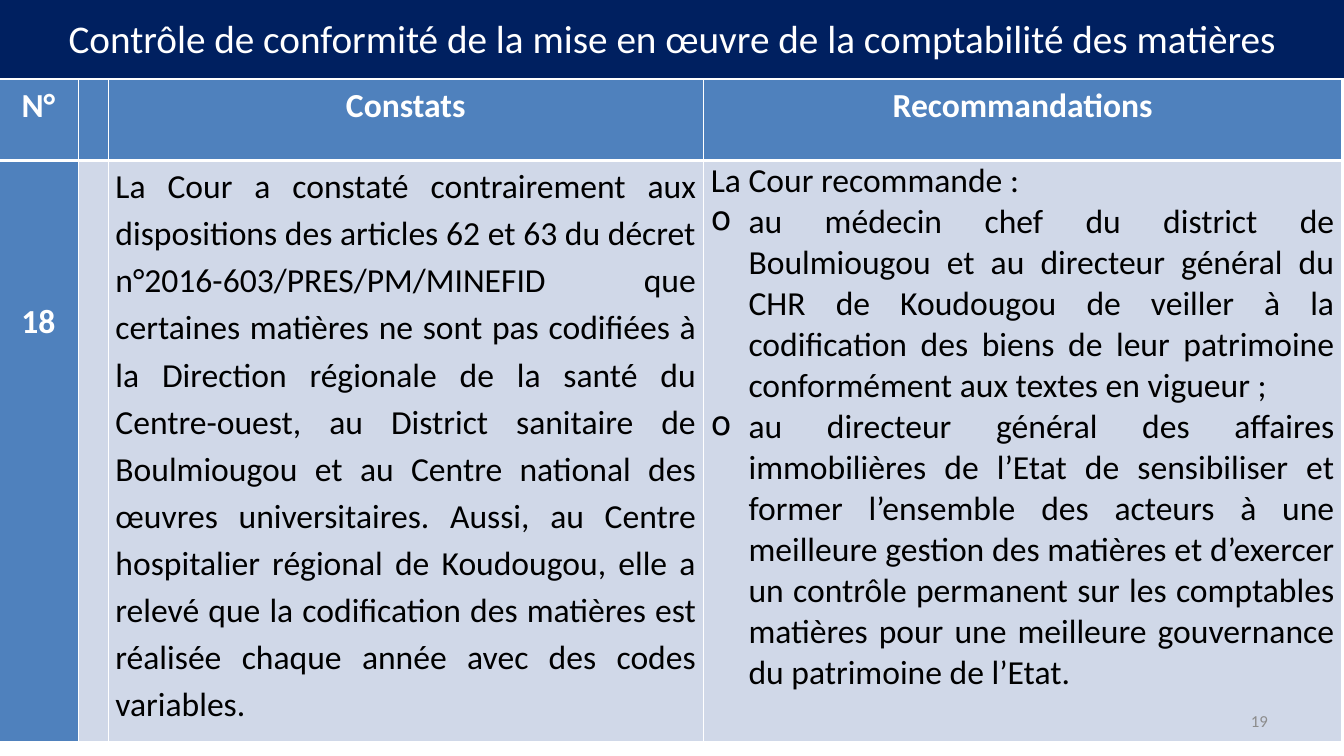
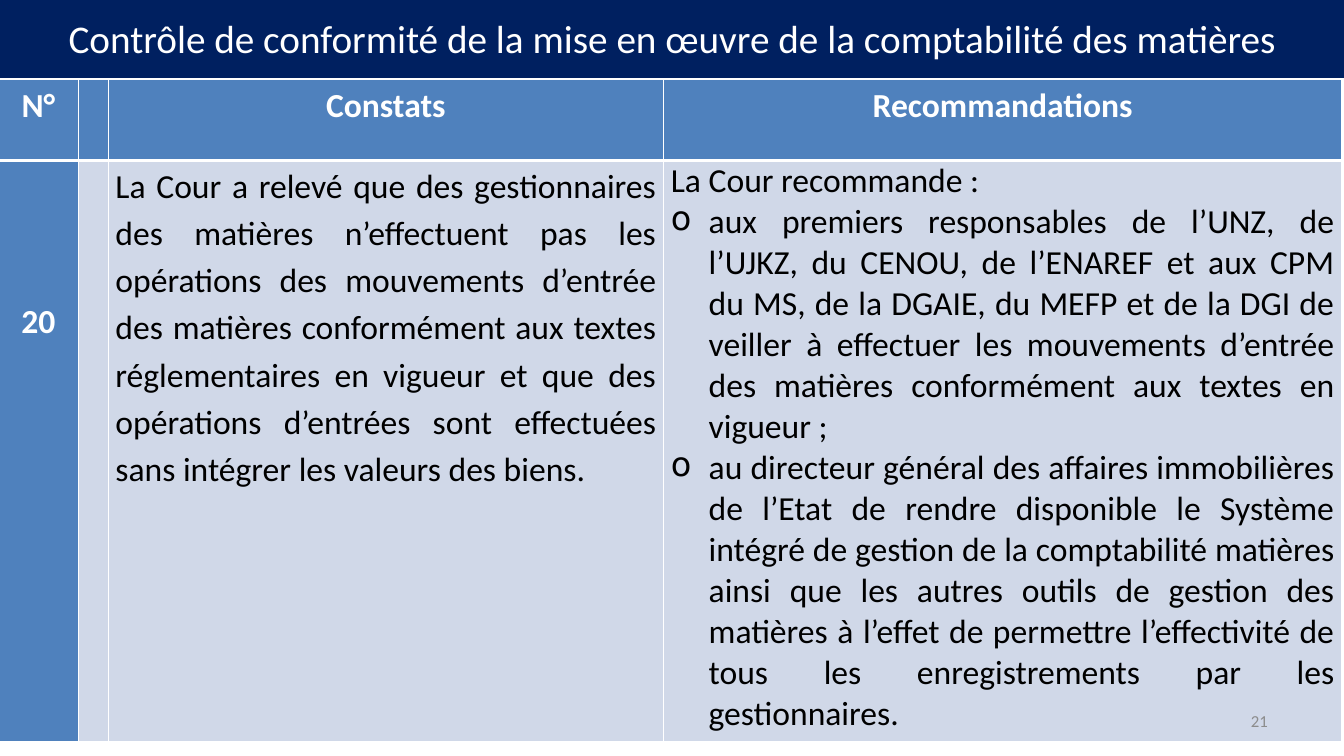
from lxml.etree import SubElement
from pptx import Presentation
from pptx.dml.color import RGBColor
from pptx.enum.dml import MSO_LINE
from pptx.enum.text import MSO_ANCHOR, MSO_AUTO_SIZE, PP_ALIGN
from pptx.oxml.ns import qn
from pptx.util import Pt

SCALE = 9525
WIDTH, HEIGHT = 1280, 720
FONT = "Calibri"
NAVY = RGBColor(0x00, 0x20, 0x60)
BLUE = RGBColor(0x4F, 0x81, 0xBD)
PALE = RGBColor(0xD0, 0xD8, 0xE8)
WHITE = RGBColor(0xFF, 0xFF, 0xFF)
BLACK = RGBColor(0x00, 0x00, 0x00)
GREY = RGBColor(0x8C, 0x8C, 0x8C)

TITLE = "Contrôle de conformité de la mise en œuvre de la comptabilité des matières"
HEADERS = ("N°", "", "Constats", "Recommandations")
INTRODUCTION = "La Cour recommande :"
NUMBER_WIDTH, SPACER_WIDTH = 77, 28
ROW_HEIGHTS = (77, 553)
NUMBER_DROP = 128
BULLET_INDENT = 36

FINDINGS = (
    {
        "number": "18",
        "page": "19",
        "finding_width": 567,
        "finding": "La Cour a constaté contrairement aux dispositions des articles 62 et 63 du décret "
        "n°2016-603/PRES/PM/MINEFID que certaines matières ne sont pas codifiées à la Direction "
        "régionale de la santé du Centre-ouest, au District sanitaire de Boulmiougou et au Centre "
        "national des œuvres universitaires. Aussi, au Centre hospitalier régional de Koudougou, "
        "elle a relevé que la codification des matières est réalisée chaque année avec des codes "
        "variables.",
        "recommendations": (
            "au médecin chef du district de Boulmiougou et au directeur général du CHR de Koudougou "
            "de veiller à la codification des biens de leur patrimoine conformément aux textes en "
            "vigueur ;",
            "au directeur général des affaires immobilières de l’Etat de sensibiliser et former "
            "l’ensemble des acteurs à une meilleure gestion des matières et d’exercer un contrôle "
            "permanent sur les comptables matières pour une meilleure gouvernance du patrimoine de "
            "l’Etat.",
        ),
    },
    {
        "number": "20",
        "page": "21",
        "finding_width": 529,
        "finding": "La Cour a relevé que des gestionnaires des matières n’effectuent pas les "
        "opérations des mouvements d’entrée des matières conformément aux textes réglementaires en "
        "vigueur et que des opérations d’entrées sont effectuées sans intégrer les valeurs des "
        "biens.",
        "recommendations": (
            "aux premiers responsables de l’UNZ, de l’UJKZ, du CENOU, de l’ENAREF et aux CPM du MS, "
            "de la DGAIE, du MEFP et de la DGI de veiller à effectuer les mouvements d’entrée des "
            "matières conformément aux textes en vigueur ;",
            "au directeur général des affaires immobilières de l’Etat de rendre disponible le "
            "Système intégré de gestion de la comptabilité matières ainsi que les autres outils de "
            "gestion des matières à l’effet de permettre l’effectivité de tous les enregistrements "
            "par les gestionnaires.",
        ),
    },
)


class Deck:
    """Hold the shared style and draw on the current slide."""

    def __init__(self):
        self.presentation = Presentation()
        self.presentation.slide_width = WIDTH * SCALE
        self.presentation.slide_height = HEIGHT * SCALE
        self.slide = None

    def add_slide(self):
        self.slide = self.presentation.slides.add_slide(self.presentation.slide_layouts[5])

    def add_text(self, paragraph, text, size=24, color=BLACK, bold=False,
                 align=PP_ALIGN.JUSTIFY, spacing=None):
        paragraph.alignment = align
        if spacing:
            paragraph.line_spacing = spacing
        run = paragraph.add_run()
        run.text = text
        run.font.name = FONT
        run.font.size = Pt(size)
        run.font.bold = bold
        run.font.color.rgb = color

    def bullet(self, paragraph):
        properties = paragraph._p.get_or_add_pPr()
        properties.set("marL", str(BULLET_INDENT * SCALE))
        properties.set("indent", str(-BULLET_INDENT * SCALE))
        SubElement(properties, qn("a:buChar")).set("char", "o")

    def title(self, text):
        shape = self.slide.shapes.title
        shape.left, shape.top = 0, 0
        shape.width, shape.height = WIDTH * SCALE, 73 * SCALE
        shape.fill.solid()
        shape.fill.fore_color.rgb = NAVY
        shape.line.color.rgb = NAVY
        shape.line.width = Pt(2)
        shape.line.dash_style = MSO_LINE.SOLID
        frame = shape.text_frame
        frame.auto_size = MSO_AUTO_SIZE.NONE
        frame.vertical_anchor = MSO_ANCHOR.MIDDLE
        self.add_text(frame.paragraphs[0], text, 28, WHITE, align=PP_ALIGN.CENTER)

    def style_cell(self, cell, fill, is_header):
        cell.margin_left = cell.margin_right = 7 * SCALE
        cell.margin_top = cell.margin_bottom = 0
        properties = cell._tc.get_or_add_tcPr()
        thick_side = "B" if is_header else "T"
        for side in "LRTB":
            line = SubElement(properties, qn(f"a:ln{side}"))
            line.set("w", str(Pt(3 if side == thick_side else 1)))
            color = SubElement(SubElement(line, qn("a:solidFill")), qn("a:srgbClr"))
            color.set("val", str(WHITE))
        cell.fill.solid()
        cell.fill.fore_color.rgb = fill

    def table(self, finding):
        finding_width = finding["finding_width"]
        rest = WIDTH - NUMBER_WIDTH - SPACER_WIDTH - finding_width
        widths = (NUMBER_WIDTH, SPACER_WIDTH, finding_width, rest)
        table = self.slide.shapes.add_table(
            len(ROW_HEIGHTS), len(widths), -2 * SCALE, 76 * SCALE,
            WIDTH * SCALE, sum(ROW_HEIGHTS) * SCALE).table
        table.horz_banding = False
        for row, height in zip(table.rows, ROW_HEIGHTS):
            row.height = height * SCALE
        for index, (width, header) in enumerate(zip(widths, HEADERS)):
            table.columns[index].width = width * SCALE
            self.style_cell(table.cell(0, index), BLUE, True)
            self.style_cell(table.cell(1, index), PALE if index else BLUE, False)
            if header:
                self.label(table.cell(0, index), header)
        number_cell = table.cell(1, 0)
        number_cell.margin_top = NUMBER_DROP * SCALE
        self.label(number_cell, finding["number"])
        self.add_text(table.cell(1, 2).text_frame.paragraphs[0], finding["finding"], spacing=1.15)
        frame = table.cell(1, 3).text_frame
        self.add_text(frame.paragraphs[0], INTRODUCTION)
        for recommendation in finding["recommendations"]:
            paragraph = frame.add_paragraph()
            self.add_text(paragraph, recommendation)
            self.bullet(paragraph)

    def label(self, cell, text):
        self.add_text(cell.text_frame.paragraphs[0], text, color=WHITE, bold=True,
                      align=PP_ALIGN.CENTER, spacing=1.15)

    def page_number(self, text):
        box = self.slide.shapes.add_textbox(918 * SCALE, 667 * SCALE, 299 * SCALE, 38 * SCALE)
        frame = box.text_frame
        frame.word_wrap = True
        frame.vertical_anchor = MSO_ANCHOR.MIDDLE
        self.add_text(frame.paragraphs[0], text, 12, GREY, align=PP_ALIGN.RIGHT)


def main():
    deck = Deck()
    for finding in FINDINGS:
        deck.add_slide()
        deck.title(TITLE)
        deck.table(finding)
        deck.page_number(finding["page"])
    deck.presentation.save("out.pptx")


if __name__ == "__main__":
    main()
